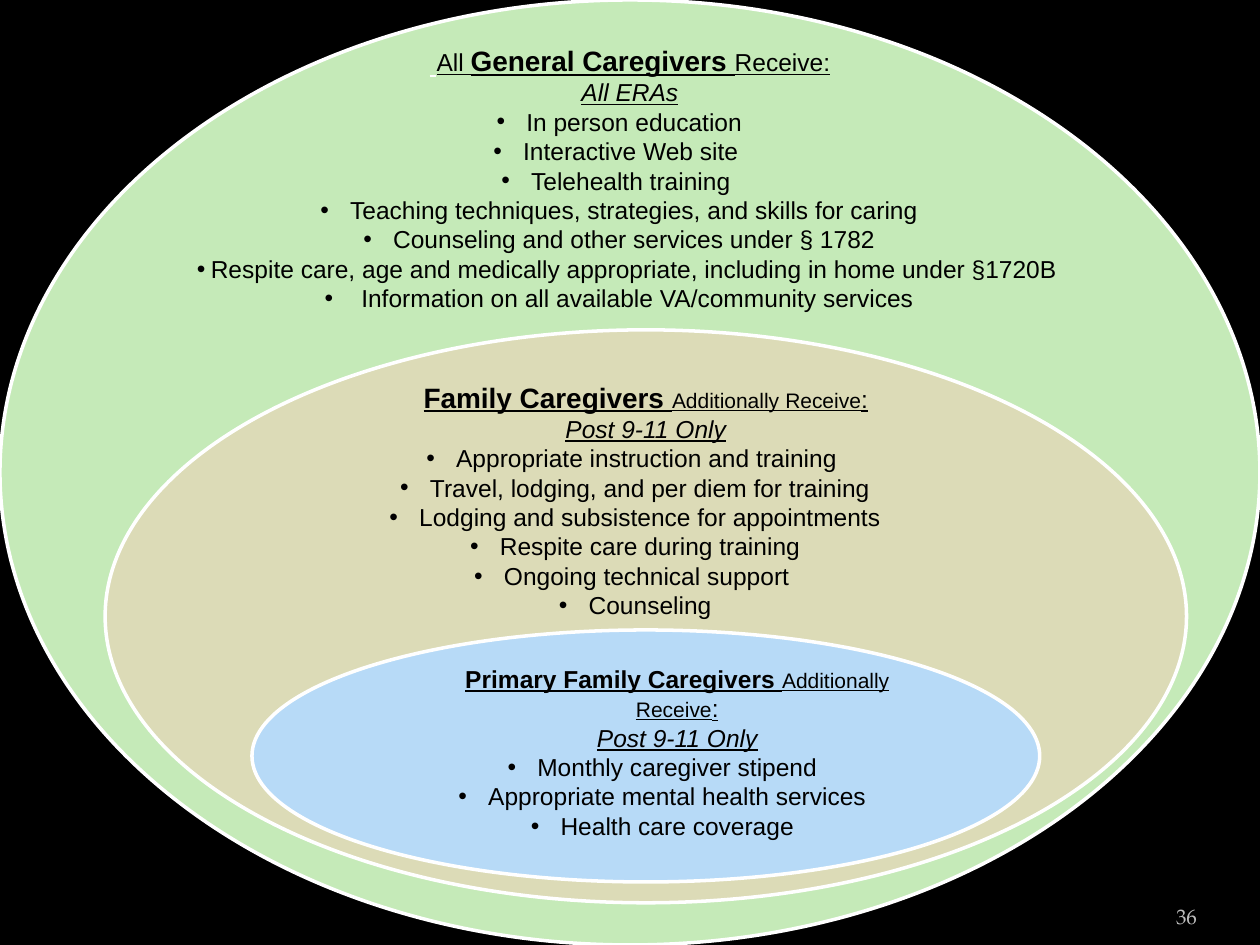
from pptx import Presentation
from pptx.dml.color import RGBColor
from pptx.enum.shapes import MSO_SHAPE
from pptx.enum.text import MSO_ANCHOR, PP_ALIGN
from pptx.oxml.ns import qn
from pptx.util import Cm, Pt
from lxml.etree import SubElement

COLORS = {
    "background": "000000", "text": "000000", "outline": "FFFFFF",
    "general": "C5EAB8", "family": "DCDBB7", "primary": "B7DAF7",
    "number": "BDBDBD",
}
BODY = {"name": "Arial", "size": Pt(14), "color": "text"}
LINK = {**BODY, "underline": True}
SMALL = {**LINK, "size": Pt(12)}
BOLD = {**LINK, "bold": True}
LARGE = {**BOLD, "size": Pt(16)}
ERA = {**LINK, "italic": True}
LEAD = {**LINK, "name": "TeX Gyre Pagella", "size": Pt(16), "color": "outline"}
NUMBER = {"name": "TeX Gyre Pagella", "size": Pt(12), "color": "number"}

LINE_HEIGHT = Pt(16.8)
BULLET_GAP = Cm(0.6)

# Each ring: its place, the space kept free below its text, and its wording
RINGS = [
    {
        "color": "general", "place": (0, 0, 25.4, 19.05),
        "below": 11.78, "left": 0, "bullet_left": 0.15,
        "heading": [(" ", LEAD), ("All ", LINK),
                    ("General Caregivers ", LARGE), ("Receive:", LINK)],
        "era": "All ERAs",
        "benefits": [
            "In person education",
            "Interactive Web site ",
            "Telehealth training ",
            "Teaching techniques, strategies, and skills for caring",
            "Counseling and other services under § 1782",
            "Respite care, age and medically appropriate, "
            "including in home under §1720B",
            " Information on all available VA/community services",
        ],
    },
    {
        "color": "family", "place": (2.12, 6.65, 21.8, 11.55),
        "below": 4.61, "left": 0, "bullet_left": 0.15,
        "heading": [("Family Caregivers ", LARGE), ("Additionally", SMALL),
                    (" ", {**SMALL, "bold": True}), ("Receive", SMALL),
                    (":", LINK)],
        "era": "Post 9-11 Only",
        "benefits": [
            "Appropriate instruction and training ",
            "Travel, lodging, and per diem for training",
            "Lodging and subsistence for appointments",
            "Respite care during training",
            "Ongoing technical support ",
            "Counseling",
        ],
    },
    {
        "color": "primary", "place": (5.08, 12.7, 15.88, 5.08),
        "below": 0.16, "left": 1.27, "bullet_left": 1.27,
        "heading": [("Primary Family Caregivers ", BOLD),
                    ("Additionally Receive", SMALL), (":", LINK)],
        "era": "Post 9-11 Only",
        "benefits": [
            "Monthly caregiver stipend",
            "Appropriate mental health services",
            "Health care coverage",
        ],
    },
]


def rgb(name):
    return RGBColor.from_string(COLORS[name])


def set_values(target, values):
    for name, value in values.items():
        setattr(target, name, value)


def add_spans(para, spans):
    for text, style in spans:
        span = para.add_run()
        span.text = text
        set_values(span.font, {k: v for k, v in style.items() if k != "color"})
        span.font.color.rgb = rgb(style["color"])


def set_indent(para, left, bullet=False):
    properties = para._p.get_or_add_pPr()
    properties.set("marL", str(Cm(left)))
    properties.set("indent", str(-BULLET_GAP if bullet else 0))
    if bullet:
        SubElement(properties, qn("a:buFont"), typeface="Arial")
        SubElement(properties, qn("a:buChar"), char="•")


def add_ring(page, ring):
    """Draw one ellipse with its heading, era and bulleted benefits."""
    shape = page.shapes.add_shape(MSO_SHAPE.OVAL, *map(Cm, ring["place"]))
    shape.shadow.inherit = False
    shape.fill.solid()
    shape.fill.fore_color.rgb = rgb(ring["color"])
    shape.line.color.rgb = rgb("outline")
    shape.line.width = Pt(2)

    frame = shape.text_frame
    set_values(frame, {
        "word_wrap": True, "vertical_anchor": MSO_ANCHOR.MIDDLE,
        "margin_top": 0, "margin_bottom": Cm(ring["below"]),
    })
    lines = [ring["heading"], [(ring["era"], ERA)]]
    lines += [[(benefit, BODY)] for benefit in ring["benefits"]]
    for index, spans in enumerate(lines):
        para = frame.add_paragraph() if index else frame.paragraphs[0]
        set_values(para, {"alignment": PP_ALIGN.CENTER,
                          "line_spacing": LINE_HEIGHT})
        bullet = index >= 2
        set_indent(para, ring["bullet_left" if bullet else "left"], bullet)
        add_spans(para, spans)


def add_page_number(page, text):
    box = page.shapes.add_textbox(Cm(22.02), Cm(17.83), Cm(2.11), Cm(1.02))
    set_values(box.text_frame, {
        "word_wrap": True, "vertical_anchor": MSO_ANCHOR.BOTTOM,
        "margin_left": 0, "margin_right": 0,
    })
    para = box.text_frame.paragraphs[0]
    para.alignment = PP_ALIGN.RIGHT
    add_spans(para, [(text, NUMBER)])


def main():
    deck = Presentation()
    deck.slide_width, deck.slide_height = Cm(25.4), Cm(19.05)
    page = deck.slides.add_slide(deck.slide_layouts[6])
    page.background.fill.solid()
    page.background.fill.fore_color.rgb = rgb("background")
    for ring in RINGS:
        add_ring(page, ring)
    add_page_number(page, "36")
    deck.save("out.pptx")


if __name__ == "__main__":
    main()
